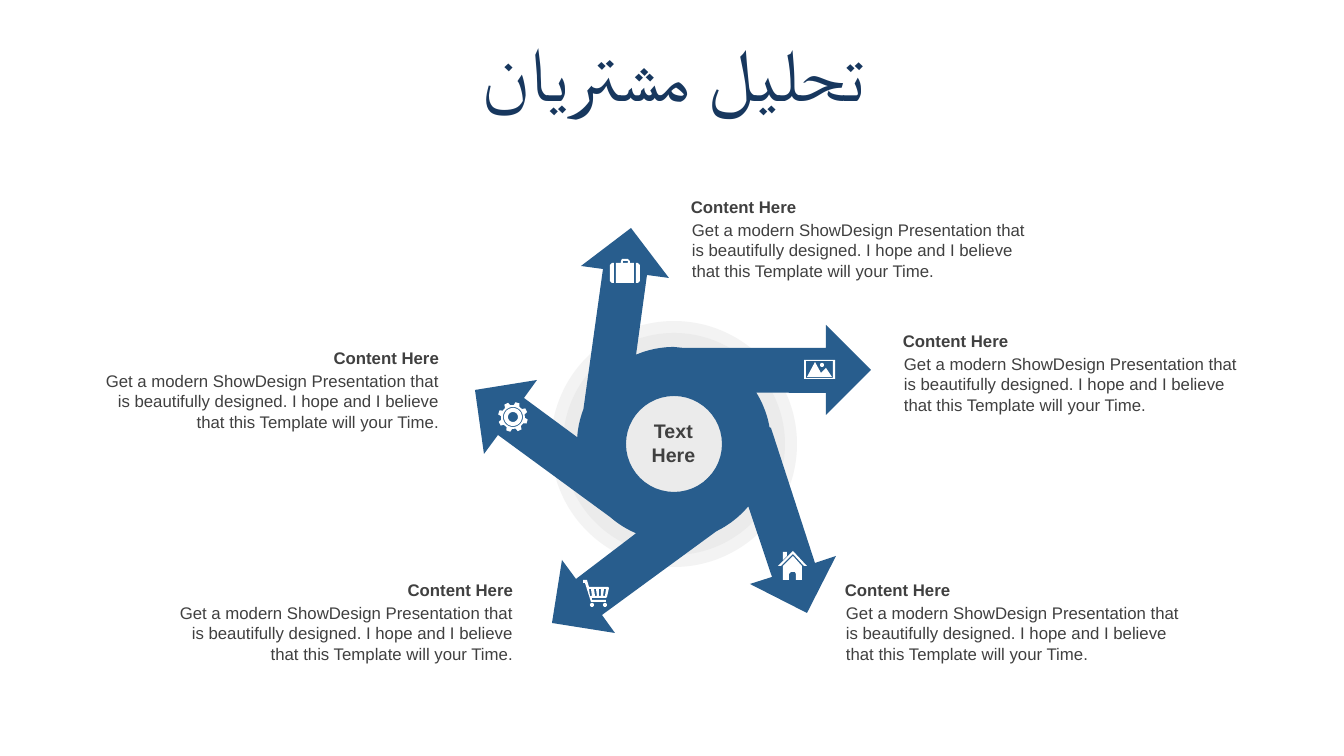
from dataclasses import dataclass
from math import cos, radians, sin

from pptx import Presentation
from pptx.dml.color import RGBColor as Color
from pptx.enum.shapes import MSO_SHAPE as Preset
from pptx.enum.text import MSO_ANCHOR as Anchor, MSO_AUTO_SIZE as AutoSize, PP_ALIGN as Align
from pptx.oxml.ns import qn
from pptx.util import Emu, Pt

SCALE = 914400 / 100.8
HUB = (674, 444)
HEADING = "Content Here"
BODY = (
    "Get a modern ShowDesign Presentation that is beautifully designed. "
    "I hope and I believe that this Template will your Time."
)
CAPTIONS = [
    (159, 575, Align.RIGHT),
    (85, 343, Align.RIGHT),
    (681, 192, Align.LEFT),
    (893, 326, Align.LEFT),
    (835, 575, Align.LEFT),
]


@dataclass(frozen=True)
class Theme:
    """Colours, typeface and type sizes of the slide."""

    navy: Color = Color.from_string("17375E")
    blue: Color = Color.from_string("285D8D")
    halo: Color = Color.from_string("D9D9D9")
    ink: Color = Color.from_string("404040")
    white: Color = Color.from_string("FFFFFF")
    face: str = "Arial"
    title: int = 54
    hub: int = 14
    caption: int = 12


THEME = Theme()


def px(value):
    """Turn pixels into EMU."""
    return Emu(round(value * SCALE))


def apply(target, values):
    """Set each named attribute on the target."""
    for name, value in values.items():
        setattr(target, name, value)


def arc(center, radius, start, end, steps=12):
    """Return points along an arc, angles in degrees clockwise from the right."""
    angles = [radians(start + (end - start) * step / steps) for step in range(steps + 1)]
    return [(center[0] + radius * cos(a), center[1] + radius * sin(a)) for a in angles]


def circle(center, radius):
    """Return the points of a full circle."""
    return arc(center, radius, 0, 360, 48)


def rectangle(left, top, right, bottom):
    """Return the corners of a rectangle."""
    return [(left, top), (right, top), (right, bottom), (left, bottom)]


def pinwheel():
    """Return the contours of the five joined arrows around the hub."""
    outline = [
        (631, 228), (669, 278), (647, 275), *arc(HUB, 97, -113, -90),
        (684, 348), (826, 348), (826, 325), (871, 370), (826, 415), (826, 393),
        *arc(HUB, 97, -32, -10),
        (771, 428), (815, 563), (836, 556), (807, 613), (750, 584), (772, 577),
        *arc(HUB, 97, 40, 64),
        (602, 615), (615, 633), (552, 623), (562, 560), (576, 579),
        *arc(HUB, 97, 113, 131),
        (498, 435), (484, 454), (475, 390), (537, 380), (524, 398),
        *arc(HUB, 97, 184, 201), (603, 269), (581, 266),
    ]
    return [outline, circle(HUB, 48)]


def cart():
    """Return the contours of the shopping cart."""
    basket = [
        (587, 580), (589, 587), (608, 587), (609, 588), (607, 597), (606, 598),
        (592, 598), (592, 600), (606, 600), (606, 602), (591, 602), (585, 583),
        (583, 583), (583, 580),
    ]
    slots = [
        [(top, 589), (low, 596), (low + 2, 596), (top + 2, 589)]
        for top, low in [(589, 590), (594, 595), (599, 599), (604, 603)]
    ]
    return [basket, *slots, circle((592, 605), 2), circle((605, 605), 2)]


def house():
    """Return the contours of the house."""
    walls = [
        (793, 556), (802, 566), (802, 580), (796, 580), (796, 574), (795, 572),
        (791, 572), (789, 574), (789, 580), (783, 580), (783, 566),
    ]
    chimney = [(783, 552), (787, 552), (787, 556), (783, 560)]
    roof = [(793, 551), (807, 566), (804, 566), (793, 554), (781, 566), (778, 566)]
    return [walls, chimney, roof]


def landscape():
    """Return the contours of the framed landscape."""
    hills = [(815, 362), (821, 373), (826, 368), (832, 377), (807, 377)]
    frame = [rectangle(804, 360, 835, 379), rectangle(806, 361, 833, 378)]
    return [*frame, hills, circle((822, 365), 2)]


def suitcase():
    """Return the contours of the suitcase."""
    left = [(614, 263), (614, 283), (612, 283), (610, 281), (610, 265), (612, 263)]
    right = [(1250 - x, y) for x, y in left]
    middle = [
        (622, 259), (628, 259), (630, 261), (630, 263), (634, 263), (634, 283),
        (616, 283), (616, 263), (621, 263), (621, 261),
    ]
    return [left, right, middle, rectangle(623, 261, 628, 263)]


def gear():
    """Return the contours of the gear wheel."""
    center = (513, 417)
    teeth = []
    for angle in range(-72, 288, 45):
        teeth += arc(center, 15, angle - 8, angle + 8, 1)
        teeth += arc(center, 12, angle + 14, angle + 31, 1)
    return [teeth, *(circle(center, radius) for radius in (10, 9, 5))]


def add_outline(page, contours, color):
    """Draw closed contours as one filled freeform."""
    paths = [[(px(x), px(y)) for x, y in points] for points in contours]
    builder = page.shapes.build_freeform(*paths[0][0])
    for index, points in enumerate(paths):
        if index:
            builder.move_to(*points[0])
        builder.add_line_segments(points[1:], close=True)
    paint(builder.convert_to_shape(), color)


def paint(shape, color):
    """Give a shape a plain fill without line or shadow."""
    shape.shadow.inherit = False
    shape.fill.solid()
    shape.fill.fore_color.rgb = color
    shape.line.fill.background()


def add_halo(page, radius):
    """Draw a translucent disc around the hub."""
    left, top = (px(value - radius) for value in HUB)
    disc = page.shapes.add_shape(Preset.OVAL, left, top, px(2 * radius), px(2 * radius))
    paint(disc, THEME.halo)
    tint = disc.fill._xPr.find(qn("a:solidFill"))[0]
    tint.makeelement(qn("a:alpha"), {})
    alpha = tint.makeelement(qn("a:alpha"), {"val": "30000"})
    tint.append(alpha)


def write(box, lines, size, color, align, bold=False, **para_format):
    """Fill a box with lines of one format."""
    frame = box.text_frame
    for index, line in enumerate(lines):
        para = frame.add_paragraph() if index else frame.paragraphs[0]
        apply(para, {"alignment": align, **para_format})
        span = para.add_run()
        span.text = line
        apply(span.font, {"name": THEME.face, "size": Pt(size), "bold": bold})
        span.font.color.rgb = color


def add_text(page, place, lines, size, align, bold=False, anchor=Anchor.TOP):
    """Add a wrapping text box."""
    box = page.shapes.add_textbox(*map(px, place))
    values = {"word_wrap": True, "auto_size": AutoSize.SHAPE_TO_FIT_TEXT, "vertical_anchor": anchor}
    apply(box.text_frame, values)
    write(box, lines, size, THEME.ink, align, bold)


def add_caption(page, left, top, align):
    """Add a bold heading with its body text below."""
    add_text(page, (left, top, 364, 30), [HEADING], THEME.caption, align, True, Anchor.MIDDLE)
    add_text(page, (left + 1, top + 23, 363, 72), [BODY], THEME.caption, align)


def add_title(page, text):
    """Place and format the title."""
    box = page.shapes.title
    apply(box, dict(zip(("left", "top", "width", "height"), map(px, (35, 37, 1276, 80)))))
    apply(box.text_frame, {"vertical_anchor": Anchor.MIDDLE, "auto_size": AutoSize.NONE})
    write(box, [text], THEME.title, THEME.navy, Align.CENTER, line_spacing=0.9)


def main():
    """Build the slide and save it."""
    deck = Presentation()
    apply(deck, {"slide_width": px(1344), "slide_height": px(756)})
    page = deck.slides.add_slide(deck.slide_layouts[5])
    add_title(page, "تحلیل مشتریان")
    for radius in (123, 111):
        add_halo(page, radius)
    add_outline(page, pinwheel(), THEME.blue)
    add_text(page, (626, 414, 95, 57), ["Text", "Here"], THEME.hub, Align.CENTER, True)
    for caption in CAPTIONS:
        add_caption(page, *caption)
    for icon in (cart, house, landscape, suitcase, gear):
        add_outline(page, icon(), THEME.white)
    deck.save("out.pptx")


if __name__ == "__main__":
    main()
